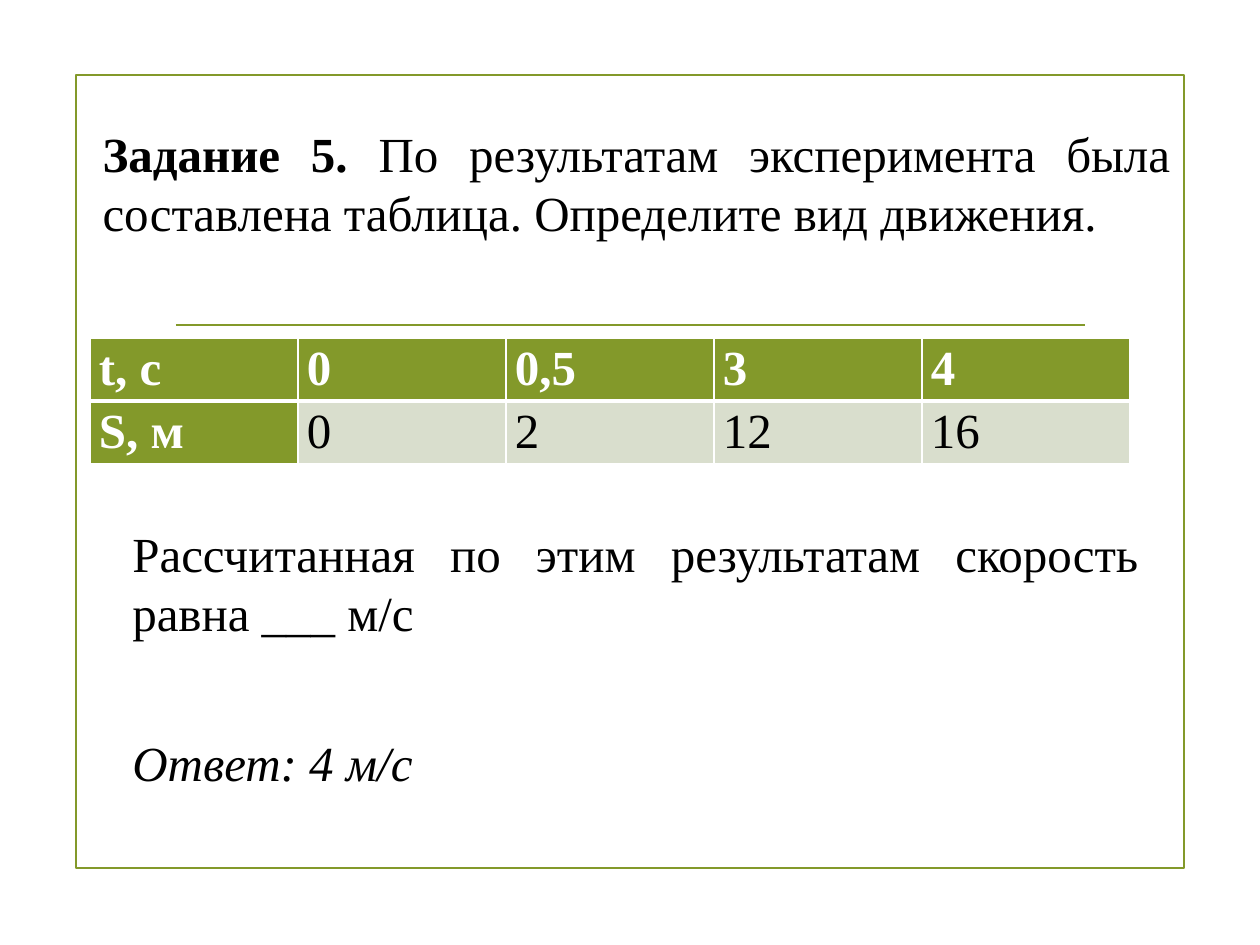
from lxml.etree import SubElement
from pptx import Presentation
from pptx.dml.color import RGBColor
from pptx.enum.shapes import MSO_CONNECTOR, MSO_SHAPE
from pptx.enum.text import MSO_ANCHOR, MSO_AUTO_SIZE, PP_ALIGN
from pptx.oxml import parse_xml
from pptx.oxml.ns import nsdecls, qn
from pptx.util import Emu, Pt

PX_PER_INCH = 126
FONT = "Times New Roman"
GREEN = RGBColor(0x83, 0x99, 0x2A)
PALE = RGBColor(0xD9, 0xDE, 0xCD)
WHITE = RGBColor(0xFF, 0xFF, 0xFF)
BLACK = RGBColor(0, 0, 0)

MEASUREMENTS = [
    ["t, с", "0", "0,5", "3", "4"],
    ["S, м", "0", "2", "12", "16"],
]


def px(length):
    return Emu(round(length * 914400 / PX_PER_INCH))


def style_paragraph(paragraph, color=BLACK, bold=False, italic=False):
    font = paragraph.font
    font.name, font.size = FONT, Pt(28)
    font.color.rgb = color
    font.bold, font.italic = bold, italic


def add_frame(slide, left, top, width, height):
    frame = slide.shapes.add_shape(
        MSO_SHAPE.RECTANGLE, px(left), px(top), px(width), px(height))
    frame.shadow.inherit = False
    frame.fill.background()
    frame.line.color.rgb = GREEN
    frame.line.width = Pt(1.25)


def add_rule(slide, left, right, y):
    rule = slide.shapes.add_connector(
        MSO_CONNECTOR.STRAIGHT, px(left), px(y), px(right), px(y))
    rule.line.color.rgb = GREEN
    rule.line.width = Pt(1.25)
    SubElement(rule._element.spPr, qn("a:effectLst"))


def fill_task(title, left, top, width, height):
    title.left, title.top = px(left), px(top)
    title.width, title.height = px(width), px(height)
    frame = title.text_frame
    frame.vertical_anchor = MSO_ANCHOR.MIDDLE
    frame.auto_size = MSO_AUTO_SIZE.SHAPE_TO_FIT_TEXT
    task = frame.paragraphs[0]
    task.alignment = PP_ALIGN.JUSTIFY
    style_paragraph(task)
    number = task.add_run()
    number.text = "Задание 5. "
    number.font.bold = True
    task.add_run().text = ("По результатам эксперимента была составлена таблица. "
                           "Определите вид движения.")


def add_text(slide, text, left, top, width, height, wrap=True,
             alignment=PP_ALIGN.LEFT, spacing=1.0, italic=False):
    box = slide.shapes.add_textbox(px(left), px(top), px(width), px(height))
    frame = box.text_frame
    frame.word_wrap = wrap
    frame.auto_size = MSO_AUTO_SIZE.SHAPE_TO_FIT_TEXT
    paragraph = frame.paragraphs[0]
    paragraph.text = text
    paragraph.alignment = alignment
    paragraph.line_spacing = spacing
    style_paragraph(paragraph, italic=italic)


def set_borders(cell, top, bottom):
    widths = {"lnL": 1, "lnR": 1, "lnT": top, "lnB": bottom}
    properties = cell._tc.get_or_add_tcPr()
    for position, (side, width) in enumerate(widths.items()):
        properties.insert(position, parse_xml(
            f'<a:{side} {nsdecls("a")} w="{Pt(width)}"><a:solidFill>'
            f'<a:srgbClr val="{WHITE}"/></a:solidFill></a:{side}>'))


def add_measurements(slide, left, top, column_width, row_height):
    rows, columns = len(MEASUREMENTS), len(MEASUREMENTS[0])
    table = slide.shapes.add_table(
        rows, columns, px(left), px(top),
        px(columns * column_width), px(rows * row_height)).table
    table.first_col = True
    for r, values in enumerate(MEASUREMENTS):
        for c, value in enumerate(values):
            cell = table.cell(r, c)
            heading = r == 0 or c == 0
            cell.margin_left = cell.margin_right = px(9)
            cell.margin_top = cell.margin_bottom = 0
            cell.fill.solid()
            cell.fill.fore_color.rgb = GREEN if heading else PALE
            # A thick line parts the header row from the values
            set_borders(cell, top=1 if r == 0 else 3, bottom=3 if r == 0 else 1)
            paragraph = cell.text_frame.paragraphs[0]
            paragraph.text = value
            paragraph.line_spacing = 1.07
            style_paragraph(paragraph, WHITE if heading else BLACK, bold=heading)


def main():
    presentation = Presentation()
    presentation.slide_width, presentation.slide_height = px(1260), px(945)
    slide = presentation.slides.add_slide(presentation.slide_layouts[5])

    # Decoration
    add_frame(slide, 76, 75, 1108, 793)
    add_rule(slide, 176, 1085, 325)

    # Task and data
    fill_task(slide.shapes.title, 90, 117, 1093, 131)
    add_measurements(slide, 90, 338, 208, 48)

    # Question and answer
    add_text(slide, "Рассчитанная по этим результатам скорость равна ___ м/с",
             120, 517, 1031, 131, alignment=PP_ALIGN.JUSTIFY)
    add_text(slide, "Ответ: 4 м/с", 120, 722, 309, 73,
             wrap=False, spacing=1.07, italic=True)

    presentation.save("out.pptx")


if __name__ == "__main__":
    main()
